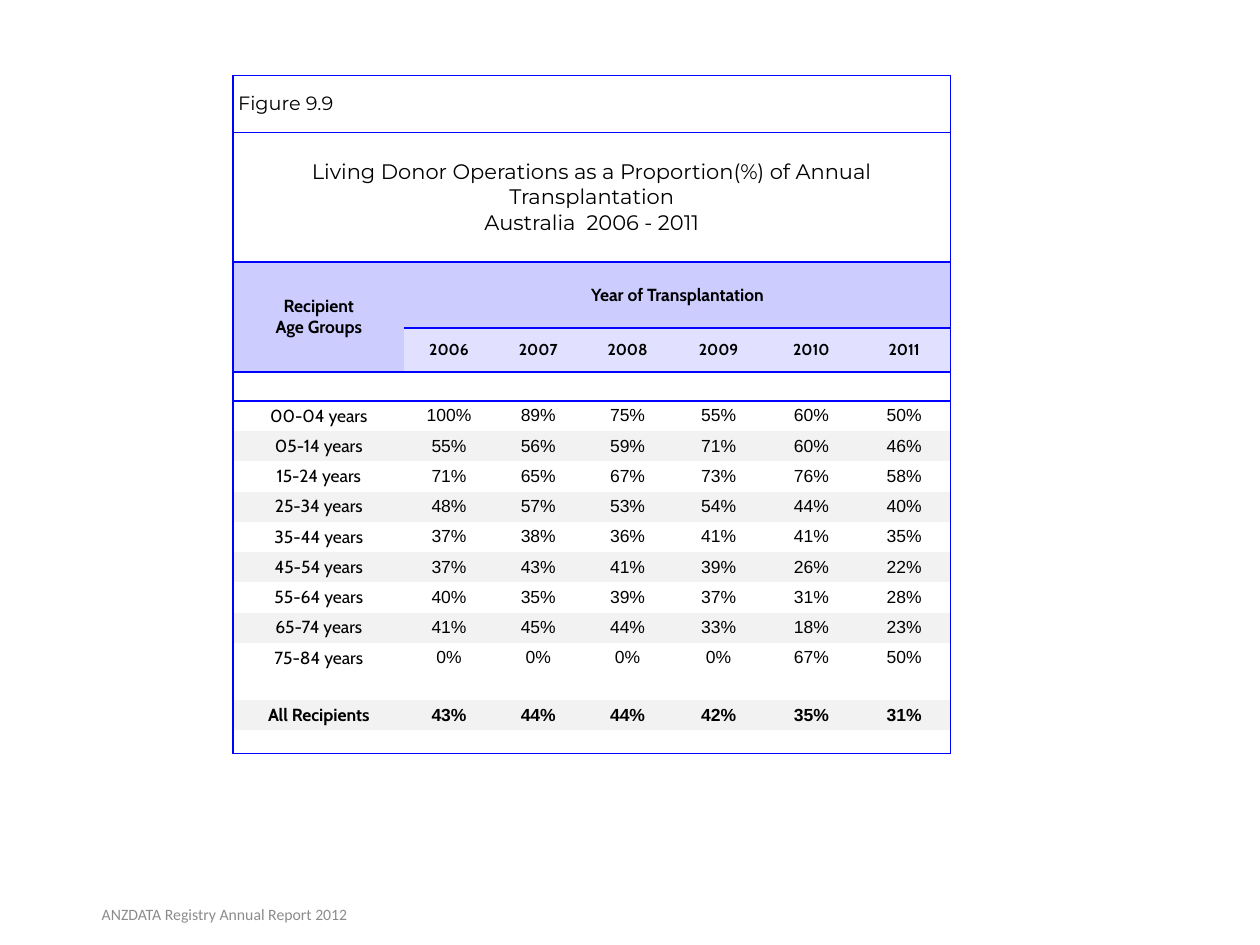
from lxml.etree import SubElement
from pptx import Presentation
from pptx.dml.color import RGBColor
from pptx.enum.text import MSO_ANCHOR as Anchor, PP_ALIGN as Align
from pptx.oxml import parse_xml
from pptx.oxml.ns import nsdecls, qn
from pptx.util import Cm, Pt

COLORS = {
    "text": "000000",
    "rule": "0000FF",
    "header": "CCCCFF",
    "years": "E1E1FF",
    "band": "F2F2F2",
    "footer": "8C8C8C",
}
NO_STYLE = "{2D5ABB26-0587-4C30-8999-92F81FD0307C}"
COLUMN_WIDTHS = [3.45] + [1.8] * 3 + [1.87] * 3
ROW_HEIGHTS = [1.15, 2.61, 1.33, 0.89, 0.58] + [0.61] * 9 + [0.54, 0.61, 0.47]
RULED_LEVELS = {0, 1, 2, 3, 4, len(ROW_HEIGHTS)}
FIRST_AGE_ROW, TOTAL_ROW = 5, 15
YEARS = range(2006, 2012)
AGE_GROUPS = {
    "00-04 years": [100, 89, 75, 55, 60, 50],
    "05-14 years": [55, 56, 59, 71, 60, 46],
    "15-24 years": [71, 65, 67, 73, 76, 58],
    "25-34 years": [48, 57, 53, 54, 44, 40],
    "35-44 years": [37, 38, 36, 41, 41, 35],
    "45-54 years": [37, 43, 41, 39, 26, 22],
    "55-64 years": [40, 35, 39, 37, 31, 28],
    "65-74 years": [41, 45, 44, 33, 18, 23],
    "75-84 years": [0, 0, 0, 0, 67, 50],
}
ALL_RECIPIENTS = [43, 44, 44, 42, 35, 31]


def write_lines(text_frame, lines, font, size, color="text", bold=False,
                align=Align.CENTER, space_after=None):
    """Write each line as a paragraph with one formatted run."""
    for index, line in enumerate(lines):
        paragraph = text_frame.add_paragraph() if index else text_frame.paragraphs[0]
        paragraph.alignment = align
        if space_after is not None:
            paragraph.space_after = Pt(space_after)
        run = paragraph.add_run()
        run.text = line
        run.font.name = font
        run.font.size = Pt(size)
        run.font.bold = bold
        run.font.color.rgb = RGBColor.from_string(COLORS[color])


def fill_cell(cell, color):
    """Give a cell a solid fill."""
    cell.fill.solid()
    cell.fill.fore_color.rgb = RGBColor.from_string(COLORS[color])


def draw_borders(cell, sides):
    """Draw blue rules on the given sides of a cell."""
    properties = cell._tc.get_or_add_tcPr()
    for index, side in enumerate(sides):
        properties.insert(index, parse_xml(
            f'<a:ln{side} {nsdecls("a")} w="12700"><a:solidFill>'
            f'<a:srgbClr val="{COLORS["rule"]}"/></a:solidFill></a:ln{side}>'))


def write_data_row(table, row, label, values, bold=False):
    """Write an age group and its yearly percentages."""
    write_lines(table.cell(row, 0).text_frame, [label], "Cabin", 10, bold=bold)
    for column, value in enumerate(values, 1):
        write_lines(table.cell(row, column).text_frame, [f"{value}%"],
                    "Arial", 10, bold=bold, space_after=14)


def write_headings(table):
    """Merge and write the caption, title and column headings."""
    last = len(COLUMN_WIDTHS) - 1
    for start, end in (((0, 0), (0, last)), ((1, 0), (1, last)),
                       ((2, 0), (3, 0)), ((2, 1), (2, last))):
        table.cell(*start).merge(table.cell(*end))
    write_lines(table.cell(0, 0).text_frame, ["Figure 9.9"], "Montserrat", 11,
                align=Align.LEFT)
    write_lines(table.cell(1, 0).text_frame,
                ["Living Donor Operations as a Proportion(%) of Annual Transplantation",
                 "Australia  2006 - 2011"], "Montserrat", 12)
    for column, lines in enumerate((["Recipient", "Age Groups"],
                                    ["Year of Transplantation"])):
        cell = table.cell(2, column)
        write_lines(cell.text_frame, lines, "Cabin", 10, bold=True)
        fill_cell(cell, "header")
    for column, year in enumerate(YEARS, 1):
        cell = table.cell(3, column)
        write_lines(cell.text_frame, [str(year)], "Cabin", 9, bold=True)
        fill_cell(cell, "years")


def format_cells(table):
    """Set margins, bands and rules by position in the grid."""
    banded = {*range(FIRST_AGE_ROW + 1, TOTAL_ROW - 1, 2), TOTAL_ROW}
    for row in range(len(ROW_HEIGHTS)):
        for column in range(len(COLUMN_WIDTHS)):
            cell = table.cell(row, column)
            cell.vertical_anchor = Anchor.MIDDLE
            cell.margin_left = cell.margin_right = Cm(0.1)
            cell.margin_top = cell.margin_bottom = Cm(0.1 if row < 2 else 0.05)
            if row in banded:
                fill_cell(cell, "band")
            if not cell.text:
                SubElement(cell.text_frame.paragraphs[0]._p, qn("a:endParaRPr"), sz="800")
            sides = {"L": column == 0,
                     "R": column + cell.span_width == len(COLUMN_WIDTHS),
                     "T": row in RULED_LEVELS,
                     "B": row + 1 in RULED_LEVELS}
            draw_borders(cell, [side for side, ruled in sides.items() if ruled])


def add_donor_table(slide, left, top):
    """Place the living donor table at the given corner."""
    frame = slide.shapes.add_table(len(ROW_HEIGHTS), len(COLUMN_WIDTHS), Cm(left), Cm(top),
                                   Cm(sum(COLUMN_WIDTHS)), Cm(sum(ROW_HEIGHTS)))
    table = frame.table
    table.first_row = table.horz_banding = False
    table._tbl.tblPr.find(qn("a:tableStyleId")).text = NO_STYLE
    for column, width in zip(table.columns, COLUMN_WIDTHS):
        column.width = Cm(width)
    for row, height in zip(table.rows, ROW_HEIGHTS):
        row.height = Cm(height)
    write_headings(table)
    for row, (label, values) in enumerate(AGE_GROUPS.items(), FIRST_AGE_ROW):
        write_data_row(table, row, label, values)
    write_data_row(table, TOTAL_ROW, "All Recipients", ALL_RECIPIENTS, bold=True)
    format_cells(table)


def add_footer(slide, left, top, width, height):
    """Place the report name in the given box."""
    shape = slide.shapes.add_textbox(Cm(left), Cm(top), Cm(width), Cm(height))
    shape.text_frame.word_wrap = True
    shape.text_frame.vertical_anchor = Anchor.MIDDLE
    write_lines(shape.text_frame, ["ANZDATA Registry Annual Report 2012"],
                "Calibri", 9, "footer")


def main():
    """Build and save the slide."""
    presentation = Presentation()
    presentation.slide_width, presentation.slide_height = Cm(25.4), Cm(19.05)
    slide = presentation.slides.add_slide(presentation.slide_layouts[6])
    add_donor_table(slide, 4.7, 1.52)
    add_footer(slide, 0.5, 17.93, 8.05, 1.02)
    presentation.save("out.pptx")


if __name__ == "__main__":
    main()
